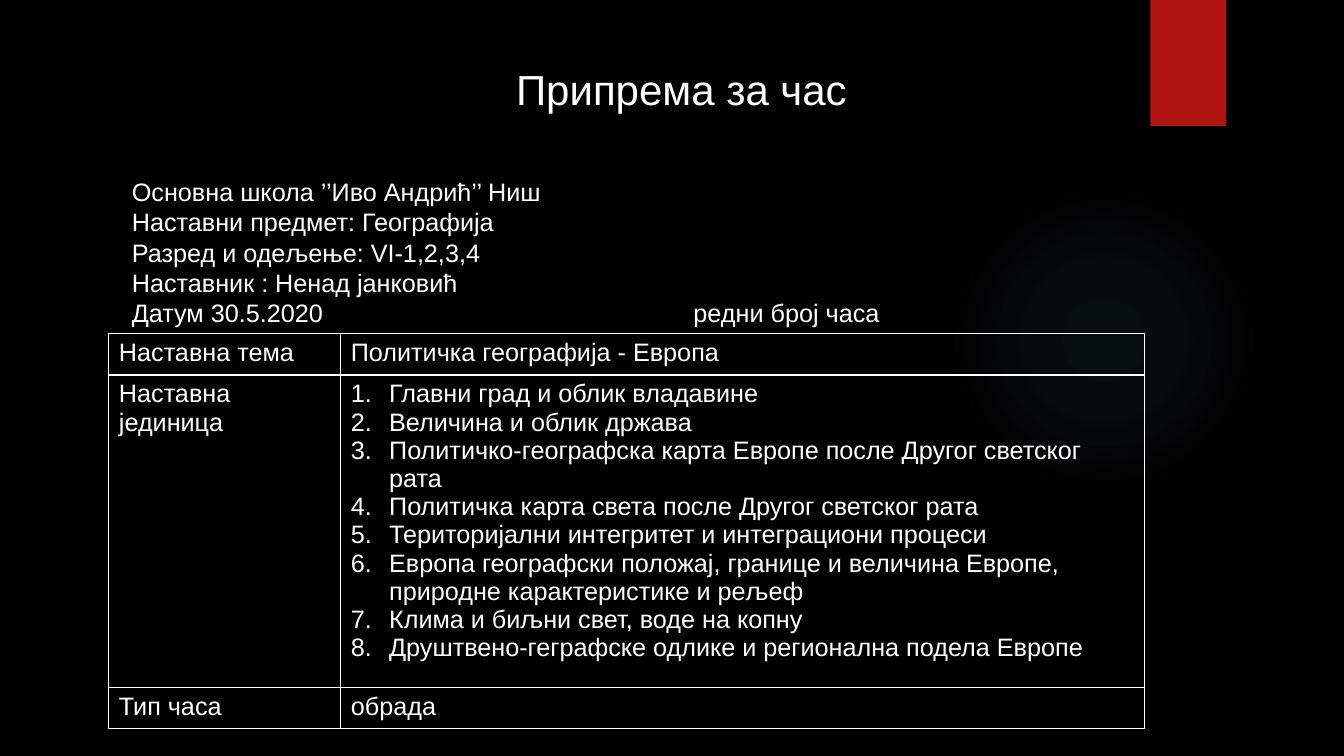
import lxml.etree
import pptx
import pptx.dml.color
import pptx.enum.shapes
import pptx.oxml
import pptx.oxml.ns
import pptx.util

Inches = pptx.util.Inches
Pt = pptx.util.Pt
qn = pptx.oxml.ns.qn
WHITE = "FFFFFF"
GLOW = "50B9C1"


def color(hex_value):
    return pptx.dml.color.RGBColor.from_string(hex_value)


def write(frame, text, size=18, line=None, tab=None, numbered=False):
    """Fill a text frame with one paragraph per line of text."""
    frame.word_wrap = True
    for index, words in enumerate(text.split("\n")):
        paragraph = frame.add_paragraph() if index else frame.paragraphs[0]
        properties = paragraph._p.get_or_add_pPr()
        if numbered:
            properties.set("marL", str(Inches(0.38)))
            properties.set("indent", str(-Inches(0.38)))
            lxml.etree.SubElement(properties, qn("a:buFont"), typeface="+mj-lt")
            lxml.etree.SubElement(properties, qn("a:buAutoNum"), type="arabicPeriod")
        if tab and "\t" in words:
            tabs = lxml.etree.SubElement(properties, qn("a:tabLst"))
            lxml.etree.SubElement(tabs, qn("a:tab"), pos=str(Inches(tab)), algn="l")
        if line:
            paragraph.line_spacing = Pt(line)
        run = paragraph.add_run()
        run.text = words
        run.font.size = Pt(size)
        run.font.name = "Arial"
        run.font.bold = False
        run.font.color.rgb = color(WHITE)


presentation = pptx.Presentation()
presentation.slide_width = Inches(13.33)
presentation.slide_height = Inches(7.5)
slide = presentation.slides.add_slide(presentation.slide_layouts[6])
slide.background.fill.solid()
slide.background.fill.fore_color.rgb = color("000000")

# Background glow and red tab
glow = slide.shapes.add_shape(
    pptx.enum.shapes.MSO_SHAPE.OVAL, Inches(9.41), Inches(1.83), Inches(3.08), Inches(3.08))
glow.shadow.inherit = False
glow.line.fill.background()
glow.fill.gradient()
gradient = glow._element.spPr.find(qn("a:gradFill"))
for child in list(gradient):
    gradient.remove(child)
stops = lxml.etree.SubElement(gradient, qn("a:gsLst"))
for position, opacity in [(0, 7), (36, 6), (69, 0), (100, 0)]:
    stop = lxml.etree.SubElement(stops, qn("a:gs"), pos=str(position * 1000))
    tint = lxml.etree.SubElement(stop, qn("a:srgbClr"), val=GLOW)
    lxml.etree.SubElement(tint, qn("a:alpha"), val=str(opacity * 1000))
circle = lxml.etree.SubElement(gradient, qn("a:path"), path="circle")
lxml.etree.SubElement(
    circle, qn("a:fillToRect"), l="50000", t="50000", r="50000", b="50000")

red_tab = slide.shapes.add_shape(
    pptx.enum.shapes.MSO_SHAPE.RECTANGLE, Inches(11.41), 0, Inches(0.75), Inches(1.25))
red_tab.shadow.inherit = False
red_tab.line.fill.background()
red_tab.fill.solid()
red_tab.fill.fore_color.rgb = color("B01513")

# Lesson details
details = slide.shapes.add_textbox(Inches(1.21), Inches(1.7), Inches(10.13), Inches(1.62))
write(details.text_frame, """Основна школа ’’Иво Андрић’’ Ниш
Наставни предмет: Географија
Разред и одељење: VI-1,2,3,4
Наставник : Ненад јанковић
Датум 30.5.2020\tредни број часа""", line=21.6, tab=5.57)

# Lesson plan
topics = """Главни град и облик владавине
Величина и облик држава
Политичко-географска карта Европе после Другог светског рата
Политичка карта света после Другог светског рата
Територијални интегритет и интеграциони процеси
Европа географски положај, границе и величина Европе, природне карактеристике и рељеф
Клима и биљни свет, воде на копну
Друштвено-геграфске одлике и регионална подела Европе"""
plan_rows = [
    ("Наставна тема", "Политичка географија - Европа", 0.41),
    ("Наставна јединица", topics, 3.1),
    ("Тип часа", "обрада", 0.41),
]
plan = slide.shapes.add_table(
    len(plan_rows), 2, Inches(1.08), Inches(3.31), Inches(10.27), Inches(3.92)).table
plan.first_row = False
plan.horz_banding = False
plan.columns[0].width = Inches(2.3)
plan.columns[1].width = Inches(7.97)
for row, (label, content, height) in enumerate(plan_rows):
    plan.rows[row].height = Inches(height)
    for column, text in enumerate((label, content)):
        cell = plan.cell(row, column)
        write(cell.text_frame, text, numbered=text == topics)
        cell.fill.background()
        cell_properties = cell._tc.get_or_add_tcPr()
        for order, side in enumerate(("a:lnL", "a:lnR", "a:lnT", "a:lnB")):
            border = pptx.oxml.ns.qn(side)
            edge = lxml.etree.Element(border, w=str(Pt(1)))
            paint = lxml.etree.SubElement(edge, qn("a:solidFill"))
            lxml.etree.SubElement(paint, qn("a:srgbClr"), val=WHITE)
            cell_properties.insert(order, edge)

title = slide.shapes.add_textbox(Inches(5.02), Inches(0.58), Inches(5.69), Inches(0.61))
write(title.text_frame, "Припрема за час", size=30)

presentation.save("out.pptx")
